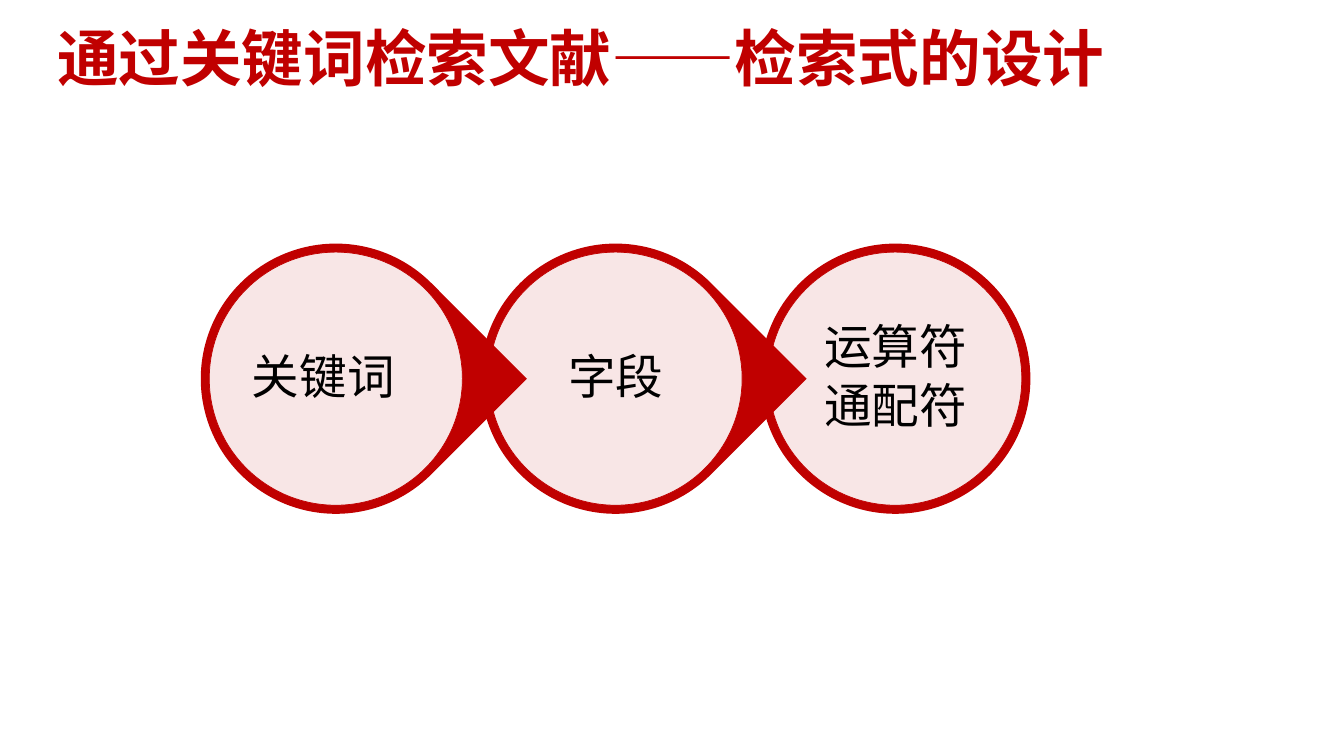
from pptx import Presentation
from pptx.dml.color import RGBColor
from pptx.enum.shapes import MSO_SHAPE
from pptx.enum.text import MSO_ANCHOR, PP_ALIGN
from pptx.oxml.ns import qn
from pptx.util import Pt
from lxml.etree import SubElement

RED = RGBColor(0xC0, 0x00, 0x00)
WHITE = RGBColor(0xFF, 0xFF, 0xFF)
BLACK = RGBColor(0x00, 0x00, 0x00)
CJK_FONT = "Noto Sans CJK SC"

deck = Presentation()
deck.slide_width = Pt(960)
deck.slide_height = Pt(540)
page = deck.slides.add_slide(deck.slide_layouts[6])


def add_text(lines, left, top, width, height, size, color, font=CJK_FONT, bold=False,
             align=PP_ALIGN.LEFT, inset=7.2, right_inset=7.2, edge=3.6, gap=0):
    box = page.shapes.add_textbox(Pt(left), Pt(top), Pt(width), Pt(height))
    frame = box.text_frame
    frame.word_wrap = True
    frame.vertical_anchor = MSO_ANCHOR.MIDDLE
    frame.margin_left, frame.margin_right = Pt(inset), Pt(right_inset)
    frame.margin_top = frame.margin_bottom = Pt(edge)
    for index, line in enumerate(lines):
        para = frame.paragraphs[0] if index == 0 else frame.add_paragraph()
        para.alignment = align
        para.line_spacing = 0.9
        para.space_after = Pt(gap)
        span = para.add_run()
        span.text = line
        span.font.name = font
        span.font.size = Pt(size)
        span.font.bold = bold
        span.font.color.rgb = color
        east_asian = SubElement(span.font._element, qn("a:ea"))
        east_asian.set("typeface", CJK_FONT)


def add_disc(kind, left, top, size, fill):
    disc = page.shapes.add_shape(kind, Pt(left), Pt(top), Pt(size), Pt(size))
    disc.shadow.inherit = False
    disc.fill.solid()
    disc.fill.fore_color.rgb = fill
    disc.line.fill.background()
    return disc


add_text(["通过关键词检索文献——检索式的设计"], 33.8, 17.3, 864, 53.3,
         size=44, color=RED, font="Calibri", bold=True)

# Lines of text, outer shape, right inset of the text
steps = [
    (["关键词"], MSO_SHAPE.TEAR, 21.6),
    (["字段"], MSO_SHAPE.TEAR, 3.6),
    (["运算符", "通配符"], MSO_SHAPE.OVAL, 3.6),
]
FIRST_LEFT, TOP, PITCH = 143.4, 174, 199.8
OUTER, INNER, LABEL = 193, 180.8, 129
inner_offset = (OUTER - INNER) / 2
label_offset = (OUTER - LABEL) / 2

# The last step lies at the back, so that each point overlaps the next circle
for index, (lines, kind, right_inset) in reversed(list(enumerate(steps))):
    left = FIRST_LEFT + index * PITCH
    outer = add_disc(kind, left, TOP, OUTER, RED)
    if kind == MSO_SHAPE.TEAR:
        outer.rotation = 45

    inner = add_disc(MSO_SHAPE.OVAL, left + inner_offset, TOP + inner_offset, INNER, WHITE)
    inner.line.color.rgb = RED
    inner.line.width = Pt(0.5)
    white = inner.fill._xPr.find(qn("a:solidFill"))[0]
    SubElement(white, qn("a:alpha")).set("val", "90000")

    add_text(lines, left + label_offset, TOP + label_offset, LABEL, LABEL,
             size=34, color=BLACK, align=PP_ALIGN.CENTER,
             inset=3.6, right_inset=right_inset, gap=5)

deck.save("out.pptx")
